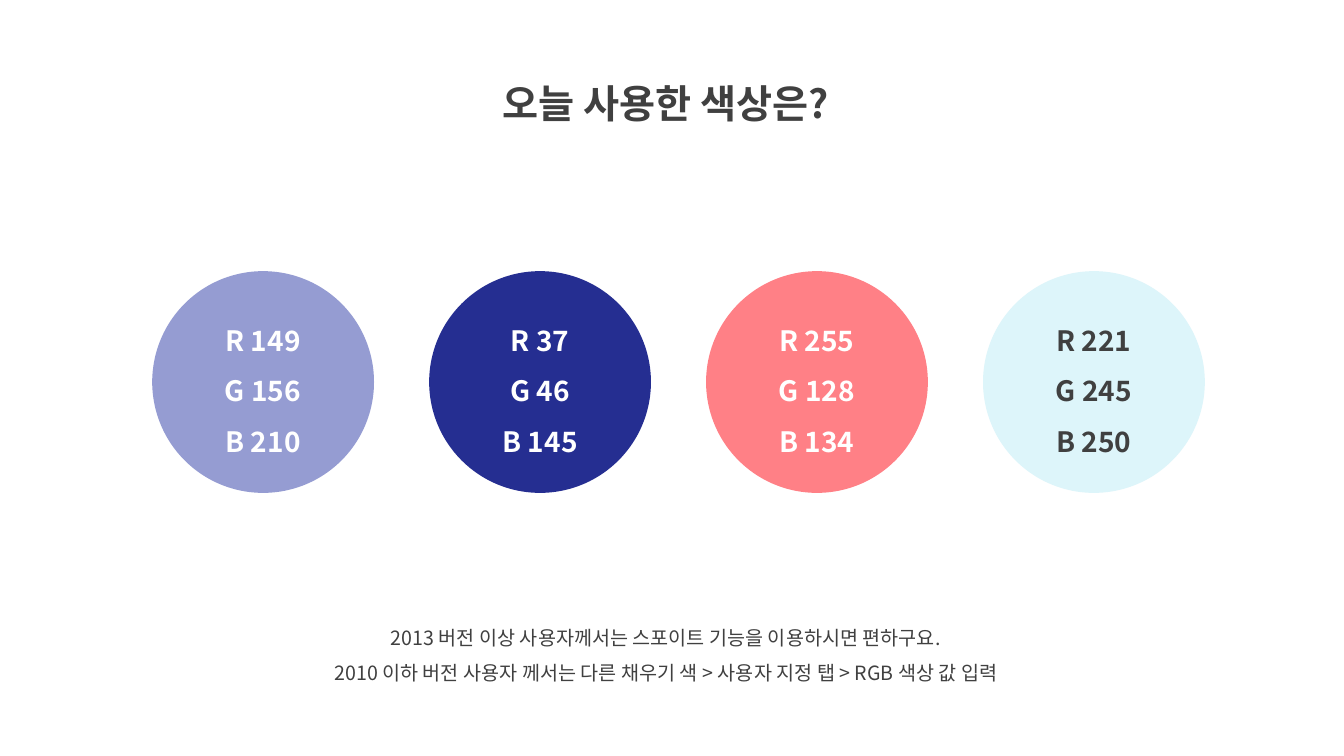
"""Build a slide showing four palette colours with their RGB values."""
from dataclasses import dataclass

from lxml import etree
from pptx import Presentation
from pptx import util as u
from pptx.dml.color import RGBColor
from pptx.enum import shapes, text
from pptx.oxml.ns import qn


@dataclass(frozen=True)
class Theme:
    font: str = "Noto Sans CJK KR"
    dark: RGBColor = RGBColor(64, 64, 64)
    white: RGBColor = RGBColor(255, 255, 255)
    title: int = 28
    value: int = 20
    note: int = 14


theme = Theme()


def write(sp, lines, size, color=theme.dark, bold=False, anchor=text.MSO_ANCHOR.TOP,
          fit=text.MSO_AUTO_SIZE.SHAPE_TO_FIT_TEXT):
    tf = sp.text_frame
    tf.word_wrap = True
    tf.auto_size = fit
    tf.vertical_anchor = anchor
    tf.text = "\n".join(lines)
    for p in tf.paragraphs:
        p.alignment = text.PP_ALIGN.CENTER
        p.line_spacing = 1.5
        r = p.runs[0]
        r.font.name = theme.font
        r.font.size = u.Pt(size)
        r.font.bold = bold
        r.font.color.rgb = color
        ea = etree.SubElement(r.font._element, qn("a:ea"))
        ea.set("typeface", theme.font)


prs = Presentation()
prs.slide_width, prs.slide_height = u.Inches(13.33), u.Inches(7.5)
s = prs.slides.add_slide(prs.slide_layouts[5])

title = s.shapes.title
title.left, title.top = u.Inches(4.29), u.Inches(0.5)
title.width, title.height = u.Inches(4.63), u.Inches(0.72)
write(title, ["오늘 사용한 색상은?"], theme.title, bold=True)

palette = [
    ((149, 156, 210), theme.white),
    ((37, 46, 145), theme.white),
    ((255, 128, 134), theme.white),
    ((221, 245, 250), theme.dark),
]
first, last, top, size = 1.51, 9.75, 2.69, 2.2
step = (last - first) / (len(palette) - 1)
for col, (rgb, ink) in enumerate(palette):
    sp = s.shapes.add_shape(shapes.MSO_SHAPE.OVAL, u.Inches(first + col * step), u.Inches(top),
                            u.Inches(size), u.Inches(size))
    sp.shadow.inherit = False
    sp.fill.solid()
    sp.fill.fore_color.rgb = RGBColor(*rgb)
    sp.line.fill.background()
    write(sp, [f"{name} {value}" for name, value in zip("RGB", rgb)], theme.value, color=ink,
          bold=True, anchor=text.MSO_ANCHOR.MIDDLE, fit=text.MSO_AUTO_SIZE.NONE)

note = s.shapes.add_textbox(u.Inches(2.61), u.Inches(6.04), u.Inches(7.99), u.Inches(0.81))
write(note, [
    "2013 버전 이상 사용자께서는 스포이트 기능을 이용하시면 편하구요.",
    "2010 이하 버전 사용자 께서는 다른 채우기 색 > 사용자 지정 탭 > RGB 색상 값 입력",
], theme.note)

prs.save("out.pptx")
